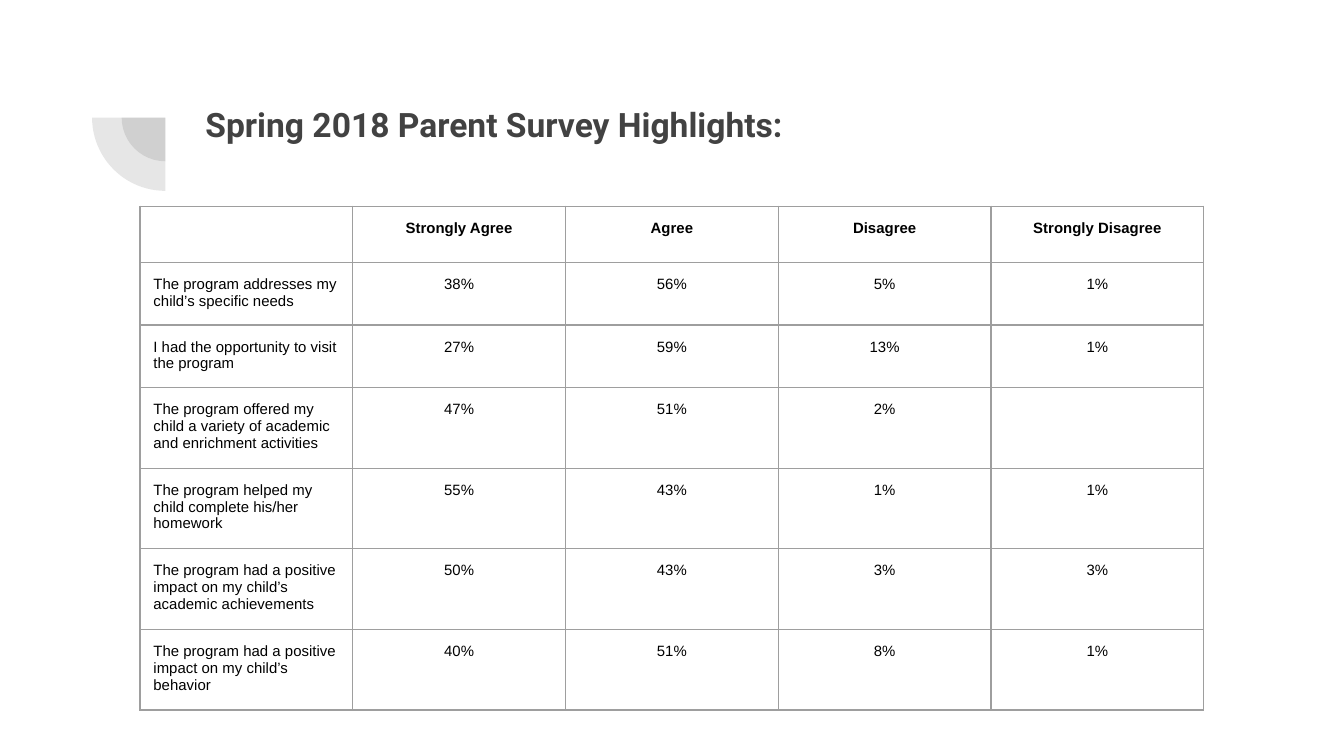
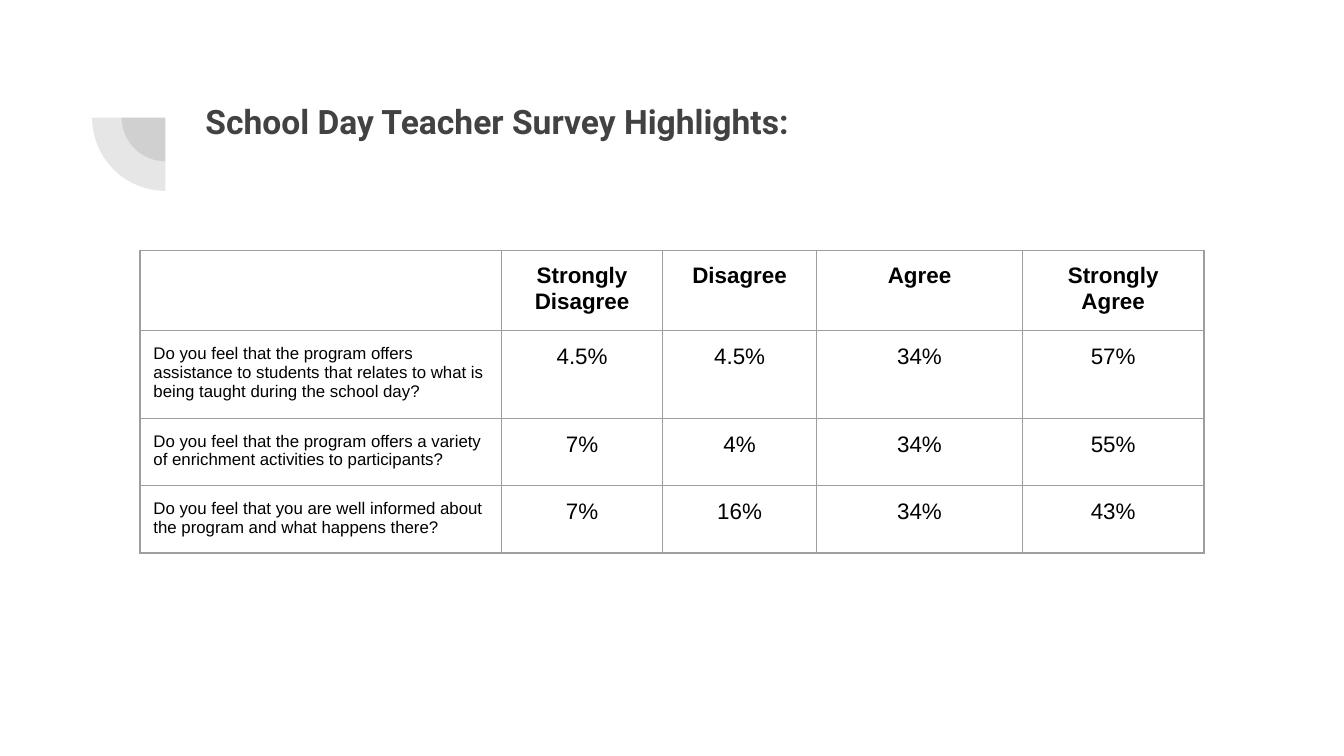
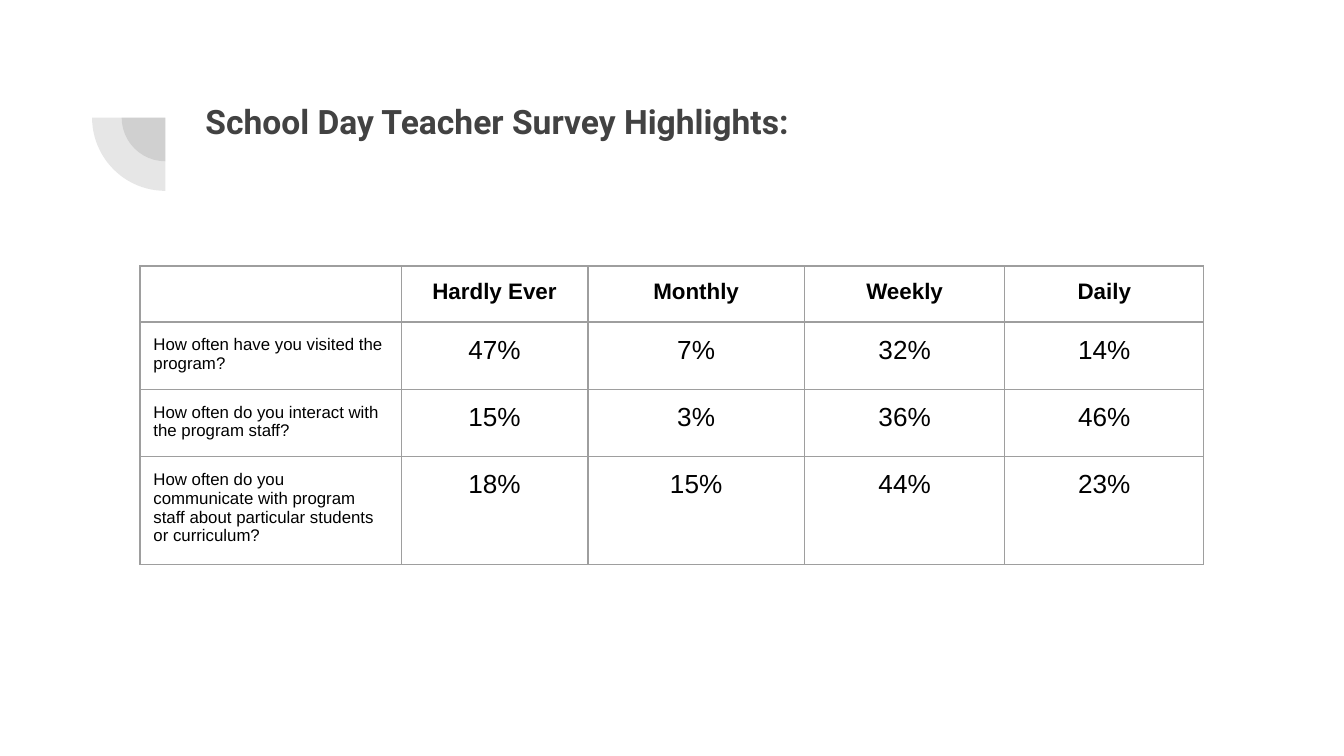
from dataclasses import dataclass

from lxml import etree
from pptx import Presentation
from pptx.dml.color import RGBColor
from pptx.enum.shapes import MSO_SHAPE
from pptx.enum.text import MSO_ANCHOR, PP_ALIGN
from pptx.oxml.ns import qn
from pptx.util import Pt

PIE = MSO_SHAPE.PIE
TOP = MSO_ANCHOR.TOP
LEFT, CENTER = PP_ALIGN.LEFT, PP_ALIGN.CENTER


@dataclass(frozen=True)
class Theme:
    """Colours, fonts and sizes that all slides share."""
    dark: str = "424242"
    ink: str = "000000"
    rule: str = "9E9E9E"
    paper: str = "FFFFFF"
    head: str = "Roboto"
    body: str = "Arial"
    title: float = 18
    line: float = 0.75
    pad: float = 7.2
    alpha: int = 13


THEME = Theme()
WIDTH, HEIGHT = 720, 405
TABLE_X, ROW_H = 75, 30

PARENT = [
    ["", "Strongly Agree", "Agree", "Disagree", "Strongly Disagree"],
    ["The program addresses my child’s specific needs", "38%", "56%", "5%", "1%"],
    ["I had the opportunity to visit the program", "27%", "59%", "13%", "1%"],
    ["The program offered my child a variety of academic and enrichment activities",
     "47%", "51%", "2%", ""],
    ["The program helped my child complete his/her homework", "55%", "43%", "1%", "1%"],
    ["The program had a positive impact on my child’s academic achievements",
     "50%", "43%", "3%", "3%"],
    ["The program had a positive impact on my child’s behavior", "40%", "51%", "8%", "1%"],
]
TEACHER = [
    ["", "Strongly Disagree", "Disagree", "Agree", "Strongly Agree"],
    ["Do you feel that the program offers assistance to students that relates to "
     "what is being taught during the school day?", "4.5%", "4.5%", "34%", "57%"],
    ["Do you feel that the program offers a variety of enrichment activities to "
     "participants?", "7%", "4%", "34%", "55%"],
    ["Do you feel that you are well informed about the program and what happens there?",
     "7%", "16%", "34%", "43%"],
]
CONTACT = [
    ["", "Hardly Ever", "Monthly", "Weekly", "Daily"],
    ["How often have you visited the program?", "47%", "7%", "32%", "14%"],
    ["How often do you interact with the program staff?", "15%", "3%", "36%", "46%"],
    ["How often do you communicate with program staff about particular students "
     "or curriculum?", "18%", "15%", "44%", "23%"],
]


def set_font(para, name, size, color, bold):
    """Style a whole paragraph."""
    font = para.font
    font.name, font.size, font.bold = name, Pt(size), bold
    font.color.rgb = RGBColor.from_string(color)


def add_pie(slide, size):
    """Draw one clear quarter disc about the shared corner."""
    pie = slide.shapes.add_shape(
        PIE, Pt(88.6 - size / 2), Pt(63 - size / 2), Pt(size), Pt(size))
    pie.adjustments[0], pie.adjustments[1] = 108, 162
    pie.rotation = 270
    pie.shadow.inherit = False
    pie.line.fill.background()
    pie.fill.solid()
    pie.fill.fore_color.rgb = RGBColor.from_string(THEME.dark)
    tint = pie.fill._xPr.find(".//" + qn("a:srgbClr"))
    etree.SubElement(tint, qn("a:alpha"), val=str(THEME.alpha * 1000))


def add_title(slide, text, top):
    """Write the slide title."""
    frame = slide.shapes.add_textbox(Pt(103), Pt(top), Pt(554), Pt(78.5)).text_frame
    frame.word_wrap = True
    frame.vertical_anchor = TOP
    frame.margin_left = frame.margin_right = Pt(THEME.pad)
    frame.margin_top = frame.margin_bottom = Pt(THEME.pad)
    para = frame.paragraphs[0]
    para.text = text
    set_font(para, THEME.head, THEME.title, THEME.dark, True)


def add_rules(cell):
    """Rule all four sides of a cell."""
    props = cell._tc.get_or_add_tcPr()
    for side in ("lnL", "lnR", "lnT", "lnB"):
        line = etree.SubElement(props, qn("a:" + side), w=str(Pt(THEME.line)))
        fill = etree.SubElement(line, qn("a:solidFill"))
        etree.SubElement(fill, qn("a:srgbClr"), val=THEME.rule)


def fill_cell(cell, text, size, bold, align):
    """Set the text, padding, rules and fill of a cell."""
    cell.margin_left = cell.margin_right = Pt(THEME.pad)
    cell.margin_top = cell.margin_bottom = Pt(THEME.pad)
    add_rules(cell)
    cell.fill.background()
    para = cell.text_frame.paragraphs[0]
    para.text = text
    para.alignment = align
    set_font(para, THEME.body, size, THEME.ink, bold)
    if not text:
        etree.SubElement(para._p, qn("a:endParaRPr"), sz=str(size * 100))


def add_grid(slide, rows, top, widths, sizes):
    """Build a survey table; sizes are for head, question and value."""
    head, ask, value = sizes
    table = slide.shapes.add_table(
        len(rows), len(widths), Pt(TABLE_X), Pt(top),
        Pt(sum(widths)), Pt(ROW_H * len(rows))).table
    table.first_row = table.horz_banding = False
    for col, width in zip(table.columns, widths):
        col.width = Pt(width)
    for r, row in enumerate(rows):
        table.rows[r].height = Pt(ROW_H)
        for c, text in enumerate(row):
            size = head if r == 0 else ask if c == 0 else value
            fill_cell(table.cell(r, c), text, size, r == 0, CENTER if c else LEFT)


def add_slide(deck, title, top):
    """Start a slide with the shared ground, corner mark and title."""
    slide = deck.slides.add_slide(deck.slide_layouts[6])
    ground = slide.background.fill
    ground.solid()
    ground.fore_color.rgb = RGBColor.from_string(THEME.paper)
    for size in (46.8, 78.5):
        add_pie(slide, size)
    add_title(slide, title, top)
    return slide


def main():
    """Build the survey deck."""
    deck = Presentation()
    deck.slide_width, deck.slide_height = Pt(WIDTH), Pt(HEIGHT)

    slide = add_slide(deck, "Spring 2018 Parent Survey Highlights:", 48.7)
    add_grid(slide, PARENT, 110.5, [114] * 5, (8, 8, 8))

    school = "School Day Teacher Survey Highlights:"
    slide = add_slide(deck, school, 47)
    add_grid(slide, TEACHER, 134, [193.7, 86.3, 82.5, 110.3, 97.2], (12, 9, 12))

    slide = add_slide(deck, school, 47)
    add_grid(slide, CONTACT, 142.5, [140, 100, 116, 107.4, 106.6], (12, 9, 14))

    deck.save("out.pptx")


if __name__ == "__main__":
    main()
